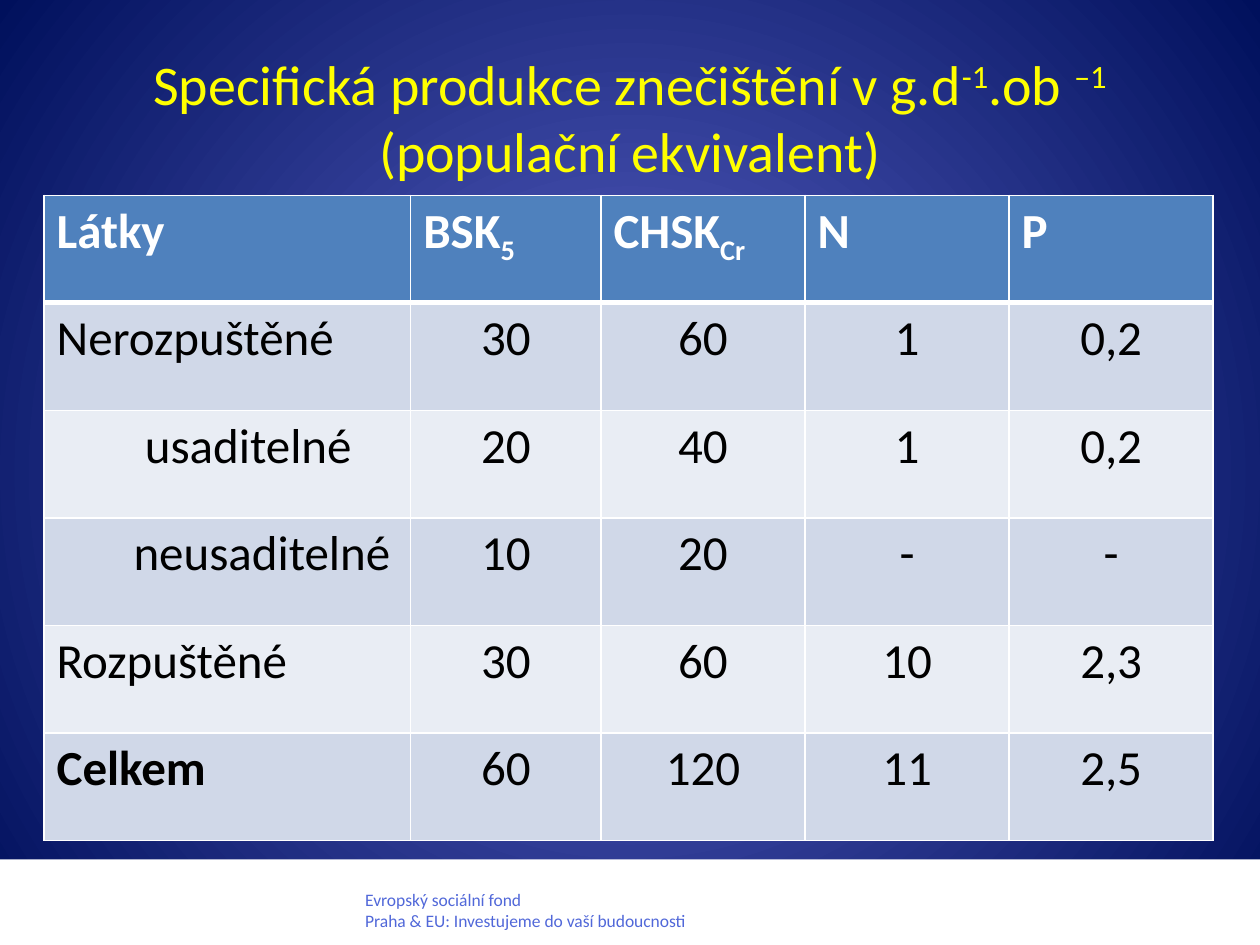
from dataclasses import dataclass

from lxml import etree
from pptx import Presentation
from pptx import util as u
from pptx.dml.color import RGBColor
from pptx.enum import shapes, text
from pptx.oxml.ns import qn


@dataclass(frozen=True)
class Theme:
    font: str = "Calibri"
    title: str = "FFFF00"
    footer: str = "5168D9"
    white: str = "FFFFFF"
    black: str = "000000"
    header: str = "4F81BD"
    bands: tuple = ("D0D8E8", "E9EDF4")
    glow: str = "5C64C9"
    night: str = "00105C"
    title_size: int = 32
    table_size: int = 28
    footer_size: int = 10


@dataclass(frozen=True)
class Piece:
    text: str
    baseline: int = 0  # percent, above or below the line


@dataclass(frozen=True)
class Row:
    label: str
    values: tuple
    indent: float = 0
    bold: bool = False


THEME = Theme()
TITLE = (Piece("Specifická produkce znečištění v g.d"), Piece("-1", 30),
         Piece(".ob "), Piece("–1", 30), Piece(" (populační ekvivalent)"))
FOOTER = ("Evropský sociální fond", "Praha & EU: Investujeme do vaší budoucnosti")
HEADER = ((Piece("Látky"),), (Piece("BSK"), Piece("5", -25)),
          (Piece("CHSK"), Piece("Cr", -25)), (Piece("N"),), (Piece("P"),))
ROWS = (
    Row("Nerozpuštěné", ("30", "60", "1", "0,2")),
    Row("usaditelné", ("20", "40", "1", "0,2"), indent=0.7),
    Row("neusaditelné", ("10", "20", "-", "-"), indent=0.61),
    Row("Rozpuštěné", ("30", "60", "10", "2,3")),
    Row("Celkem", ("60", "120", "11", "2,5"), bold=True),
)
COLUMN_WIDTHS = (2.91, 1.51, 1.62, 1.62, 1.62)
ROW_HEIGHT = 5.12 / 6


def rgb(color: str) -> RGBColor:
    return RGBColor.from_string(color)


def add_run(p, piece: Piece, size: int, color: str, bold: bool = False) -> None:
    r = p.add_run()
    r.text = piece.text
    r.font.name, r.font.size, r.font.bold = THEME.font, u.Pt(size), bold
    r.font.color.rgb = rgb(color)
    if piece.baseline:
        r.font._element.set("baseline", str(piece.baseline * 1000))


def add_text_box(s, left: float, top: float, width: float, height: float):
    tf = s.shapes.add_textbox(*map(u.Inches, (left, top, width, height))).text_frame
    tf.word_wrap = True
    return tf


def paint_background(s) -> None:
    """Radial gradient, light in the middle."""
    fill = s.background.fill
    fill.gradient()
    for stop, color in zip(fill.gradient_stops, (THEME.glow, THEME.night)):
        stop.color.rgb = rgb(color)
    fill.gradient_stops[0].position = 0
    fill.gradient_stops[1].position = 1
    grad = s._element.find(".//" + qn("a:gradFill"))
    grad.remove(grad.find(qn("a:lin")))
    circle = etree.SubElement(grad, qn("a:path"), path="circle")
    etree.SubElement(circle, qn("a:fillToRect"),
                     {side: "50000" for side in "ltrb"})


def add_title(s) -> None:
    tf = add_text_box(s, 0.5, 0.3, 9, 1.25)
    tf.vertical_anchor = text.MSO_ANCHOR.MIDDLE
    p = tf.paragraphs[0]
    p.alignment = text.PP_ALIGN.CENTER
    for piece in TITLE:
        add_run(p, piece, THEME.title_size, THEME.title)


def add_footer(s) -> None:
    sp = s.shapes.add_shape(shapes.MSO_SHAPE.RECTANGLE, 0, u.Inches(6.82),
                            u.Inches(10), u.Inches(0.68))
    sp.shadow.inherit = False
    sp.fill.solid()
    sp.fill.fore_color.rgb = rgb(THEME.white)
    sp.line.fill.background()
    tf = add_text_box(s, 2.8, 7.01, 3.78, 0.44)
    tf.auto_size = text.MSO_AUTO_SIZE.SHAPE_TO_FIT_TEXT
    p = tf.paragraphs[0]
    for i, line in enumerate(FOOTER):
        if i:
            p.add_line_break()
        add_run(p, Piece(line), THEME.footer_size, THEME.footer)


def style_cell(cell, fill: str, top: float = 1, bottom: float = 1) -> None:
    """Border widths are in points; sides are always 1."""
    tc_pr = cell._tc.get_or_add_tcPr()
    for side, width in (("L", 1), ("R", 1), ("T", top), ("B", bottom)):
        ln = etree.SubElement(tc_pr, qn(f"a:ln{side}"), w=str(u.Pt(width)))
        solid = etree.SubElement(ln, qn("a:solidFill"))
        etree.SubElement(solid, qn("a:srgbClr"), val=THEME.white)
    cell.fill.solid()
    cell.fill.fore_color.rgb = rgb(fill)


def add_table(s) -> None:
    table = s.shapes.add_table(
        len(ROWS) + 1, len(HEADER), u.Inches(0.35), u.Inches(1.55),
        u.Inches(sum(COLUMN_WIDTHS)), u.Inches(ROW_HEIGHT * 6)).table
    for column, width in zip(table.columns, COLUMN_WIDTHS):
        column.width = u.Inches(width)
    for table_row in table.rows:
        table_row.height = u.Inches(ROW_HEIGHT)

    for c, pieces in enumerate(HEADER):
        cell = table.cell(0, c)
        style_cell(cell, THEME.header, bottom=3)
        for piece in pieces:
            add_run(cell.text_frame.paragraphs[0], piece, THEME.table_size,
                    THEME.white, bold=True)

    for n, row in enumerate(ROWS):
        for c, value in enumerate((row.label, *row.values)):
            cell = table.cell(n + 1, c)
            style_cell(cell, THEME.bands[n % 2], top=1 if n else 3)
            p = cell.text_frame.paragraphs[0]
            if c:
                p.alignment = text.PP_ALIGN.CENTER
            elif row.indent:
                p._p.get_or_add_pPr().set("marL", str(u.Inches(row.indent)))
            add_run(p, Piece(value), THEME.table_size, THEME.black,
                    bold=row.bold and c == 0)


def main() -> None:
    prs = Presentation()
    prs.slide_width, prs.slide_height = u.Inches(10), u.Inches(7.5)
    s = prs.slides.add_slide(prs.slide_layouts[6])
    paint_background(s)
    add_footer(s)
    add_title(s)
    add_table(s)
    prs.save("out.pptx")


if __name__ == "__main__":
    main()
